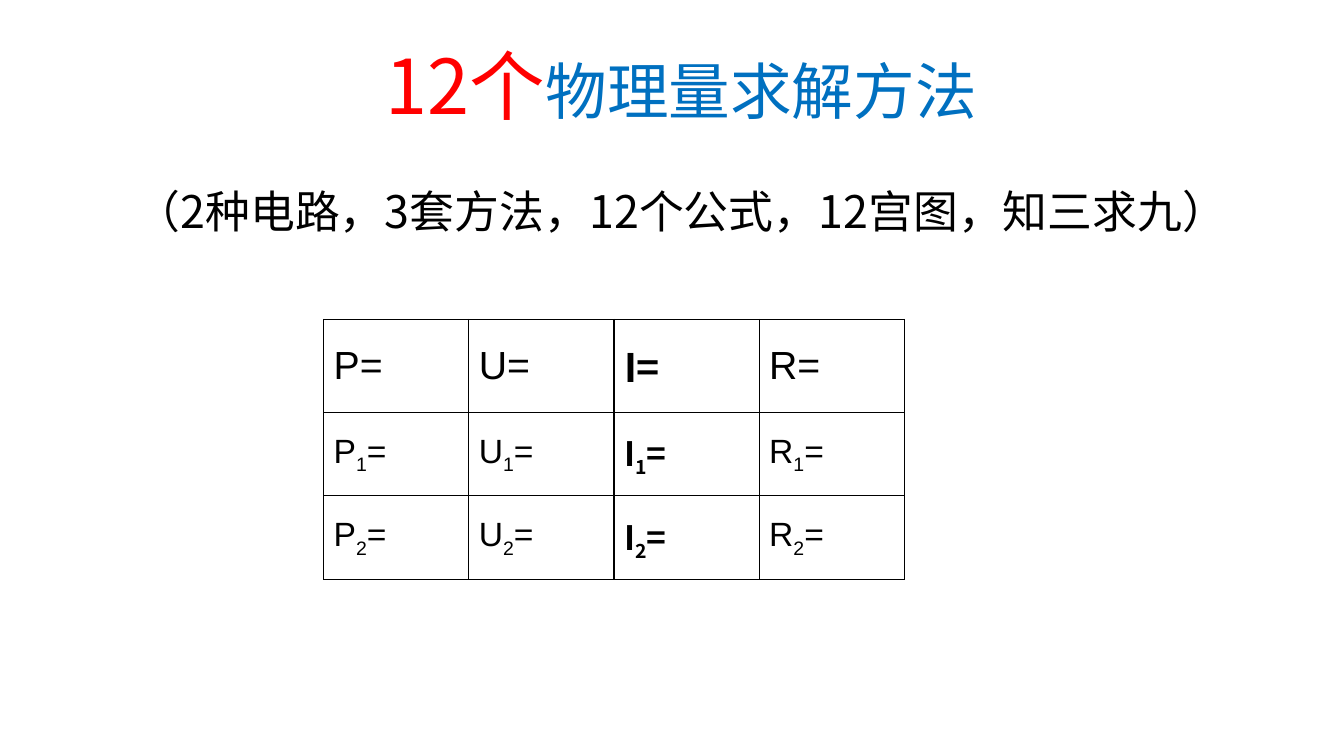
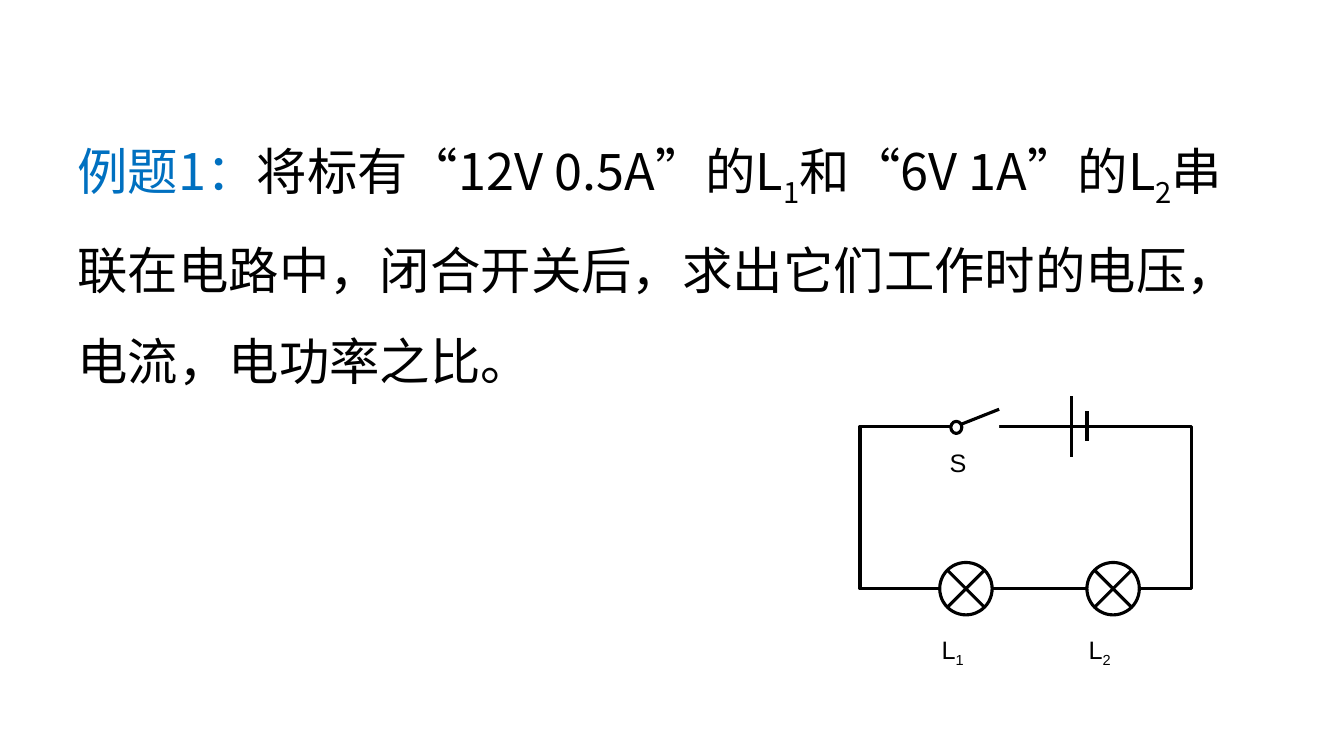
from lxml import etree
from pptx import Presentation
from pptx.dml.color import RGBColor
from pptx.enum.shapes import MSO_CONNECTOR, MSO_SHAPE
from pptx.enum.text import MSO_ANCHOR, MSO_AUTO_SIZE, PP_ALIGN
from pptx.oxml.ns import qn
from pptx.util import Pt

PX = 9144  # EMU; 100 px to the inch
COLORS = {"ink": "000000", "paper": "FFFFFF", "accent": "FF0000", "heading": "0070C0"}
CJK, CJK_BOLD, LATIN = "Noto Sans CJK SC", "Noto Sans CJK TC", "Arial"


def px(*lengths):
    return [round(length * PX) for length in lengths]


def rgb(name):
    return RGBColor.from_string(COLORS[name])


def write(paragraph, text, size, font=CJK, color="ink", bold=False):
    """Append text to a paragraph; every second part between bars is a subscript."""
    for index, part in enumerate(text.split("|")):
        run = paragraph.add_run()
        run.text = part
        run.font.size, run.font.name, run.font.bold = Pt(size), font, bold
        run.font.color.rgb = rgb(color)
        properties = run._r.get_or_add_rPr()
        etree.SubElement(properties, qn("a:ea"), typeface=font)
        if index % 2:
            properties.set("baseline", "-25000")


def text_box(shapes, box):
    """Add a wrapping text box and return its first paragraph."""
    frame = shapes.add_textbox(*px(*box)).text_frame
    frame.word_wrap = True
    return frame.paragraphs[0]


def outline(shapes, kind, box, fill="paper", line="ink"):
    shape = shapes.add_shape(kind, *px(*box))
    shape.shadow.inherit = False
    if fill:
        shape.fill.solid()
        shape.fill.fore_color.rgb = rgb(fill)
    else:
        shape.fill.background()
    if line:
        shape.line.color.rgb = rgb(line)
        shape.line.width = Pt(2.25)
    else:
        shape.line.fill.background()


def wire(shapes, x1, y1, x2, y2, width=2.25):
    line = shapes.add_connector(MSO_CONNECTOR.STRAIGHT, *px(x1, y1, x2, y2))
    line.line.color.rgb = rgb("ink")
    line.line.width = Pt(width)
    etree.SubElement(line._element.spPr, qn("a:effectLst"))


def heading(slide, box):
    title = slide.shapes.title
    title.left, title.top, title.width, title.height = px(*box)
    frame = title.text_frame
    frame.word_wrap = True
    frame.auto_size = MSO_AUTO_SIZE.NONE
    frame.vertical_anchor = MSO_ANCHOR.TOP
    paragraph = frame.paragraphs[0]
    paragraph.alignment = PP_ALIGN.CENTER
    write(paragraph, "12个", 54, color="accent")
    write(paragraph, "物理量求解方法", 44, color="heading")


def border_cell(cell):
    properties = cell._tc.get_or_add_tcPr()
    for position, side in enumerate(("a:lnL", "a:lnR", "a:lnT", "a:lnB")):
        border = etree.Element(qn(side), w=str(Pt(1)))
        fill = etree.SubElement(border, qn("a:solidFill"))
        etree.SubElement(fill, qn("a:srgbClr"), val=COLORS["ink"])
        properties.insert(position, border)


def quantity_table(slide, box, row_heights):
    """Grid of quantities: whole circuit first, then each of the two lamps."""
    quantities = "PUIR"
    table = slide.shapes.add_table(len(row_heights), len(quantities), *px(*box)).table
    table.first_row = table.horz_banding = False
    for column in table.columns:
        column.width = px(box[2] / len(quantities))[0]
    for r, height in enumerate(row_heights):
        table.rows[r].height = px(height)[0]
        for c, quantity in enumerate(quantities):
            cell = table.cell(r, c)
            cell.vertical_anchor = MSO_ANCHOR.MIDDLE
            if r:
                cell.fill.solid()
                cell.fill.fore_color.rgb = rgb("paper")
            else:
                cell.fill.background()
            border_cell(cell)
            current = quantity == "I"
            write(cell.text_frame.paragraphs[0],
                  f"{quantity}|{r}|=" if r else f"{quantity}=",
                  24 if r else 28, CJK_BOLD if current else LATIN, bold=current)


def lamp(shapes, x, y, number):
    """Crossed circle centred on x, y with its label below."""
    radius, arm = 26, 18
    outline(shapes, MSO_SHAPE.OVAL, (x - radius, y - radius, 2 * radius, 2 * radius))
    for slope in (1, -1):
        wire(shapes, x - arm, y - slope * arm, x + arm, y + slope * arm)
    write(text_box(shapes, (x - 34, y + 40, 93, 40)), f"L|{number}|", 18, LATIN)


def switch(shapes, x, y):
    """Open switch hinged at x, y."""
    outline(shapes, MSO_SHAPE.RECTANGLE, (x, y - 17, 43, 30), line=None)
    wire(shapes, x, y, x + 43, y - 17)
    outline(shapes, MSO_SHAPE.OVAL, (x - 5, y - 5, 11, 12))
    write(text_box(shapes, (x - 16, y + 16, 52, 40)), "S", 18, LATIN)


def battery(shapes, x, y):
    for offset, reach, width in ((0, 30, 2.25), (15, 15, 3)):
        wire(shapes, x + offset, y - reach, x + offset, y + reach, width)


def series_circuit(slide, box):
    left, top, width, height = box
    shapes = slide.shapes.add_group_shape().shapes
    outline(shapes, MSO_SHAPE.RECTANGLE, box, fill=None)
    battery(shapes, left + 210, top)
    switch(shapes, left + 95, top)
    for number, offset in enumerate((105, 251), 1):
        lamp(shapes, left + offset, top + height, number)


def method_slide(prs):
    slide = prs.slides.add_slide(prs.slide_layouts[5])
    heading(slide, (121, 34, 1110, 110))
    summary = text_box(slide.shapes, (121, 177, 1110, 120))
    summary.alignment = PP_ALIGN.CENTER
    write(summary, "（2种电路，3套方法，12个公式，12宫图，知三求九）", 32)
    quantity_table(slide, (321, 317, 576, 258), (92, 83, 83))


def example_slide(prs):
    slide = prs.slides.add_slide(prs.slide_layouts[6])
    problem = text_box(slide.shapes, (67, 100, 1163, 283))
    problem.line_spacing = 1.5
    write(problem, "例题1：", 36, color="heading")
    write(problem, "将标有“12V 0.5A”的L|1|和“6V 1A”的L|2|"
          "串联在电路中，闭合开关后，求出它们工作时的电压，电流，电功率之比。", 36)
    series_circuit(slide, (853, 423, 329, 161))


def main():
    prs = Presentation()
    prs.slide_width, prs.slide_height = px(1333, 750)
    method_slide(prs)
    example_slide(prs)
    prs.save("out.pptx")


if __name__ == "__main__":
    main()
